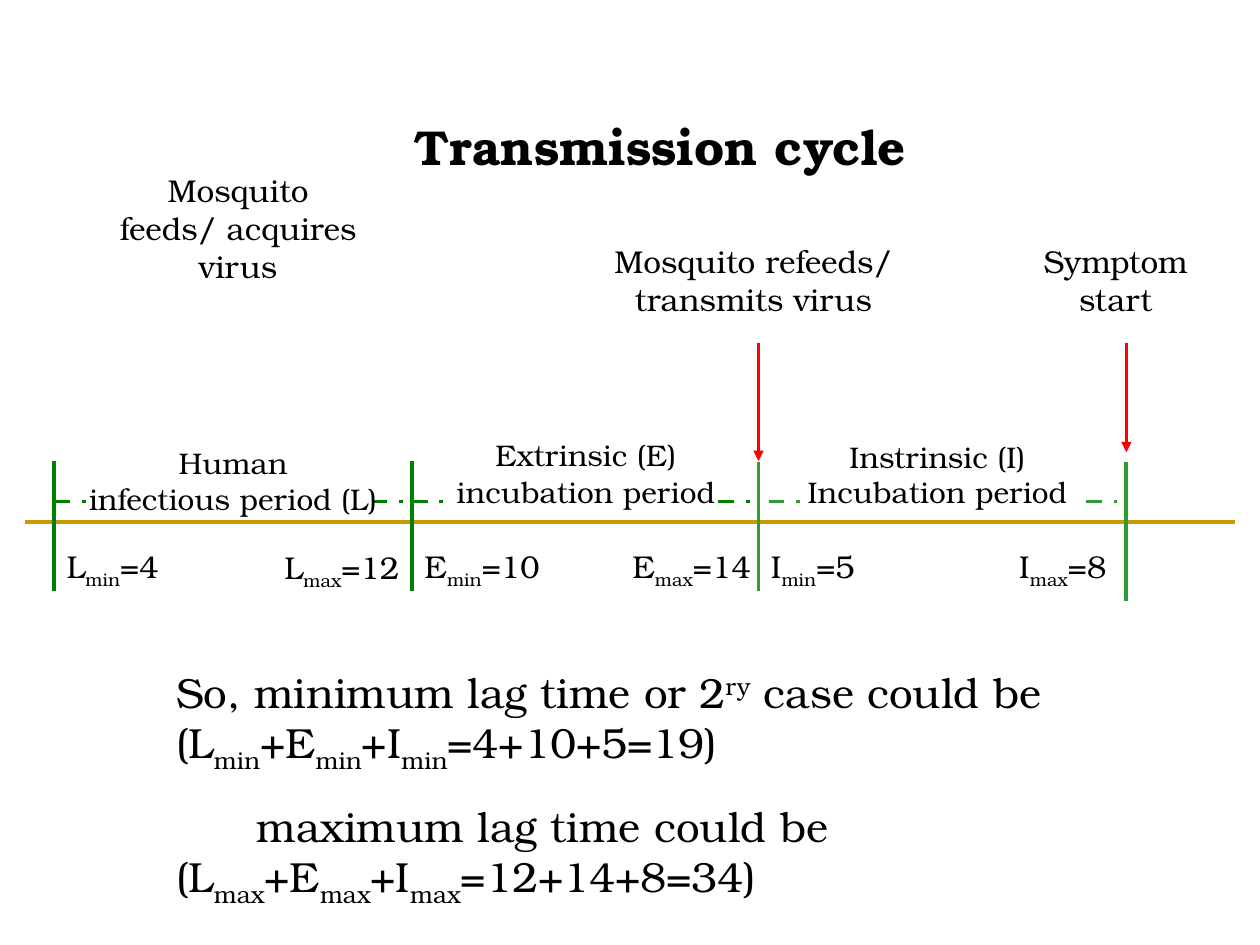
import pptx
import pptx.util
import pptx.dml.color
import pptx.enum.dml
import pptx.enum.shapes
import pptx.enum.text
import pptx.oxml.ns
from lxml import etree

Inches = pptx.util.Inches
Pt = pptx.util.Pt
ALIGN = pptx.enum.text.PP_ALIGN

FONT = "TeX Gyre Bonum"
COLORS = {"text": "000000", "axis": "CC9900", "human": "008000",
          "mosquito": "339933", "event": "FF0000"}
BASELINES = {"sub": "-25000", "super": "30000"}

TITLE = "Transmission cycle"
AXIS_Y, DASH_Y, DASH_LENGTH = 4.14, 3.98, 0.32
MARKS = [  # x, top, bottom, color
    (0.43, 3.66, 4.69, "human"),
    (3.27, 3.66, 4.69, "human"),
    (6.02, 3.67, 4.69, "mosquito"),
    (8.94, 3.67, 4.77, "mosquito"),
]
DASHES = [  # left end, color
    (0.43, "human"), (2.95, "human"), (3.27, "human"),
    (5.7, "human"), (6.1, "mosquito"), (8.62, "mosquito"),
]
EVENT_ARROWS = [(6.02, 3.66), (8.94, 3.59)]  # x, tip
EVENT_ARROW_TOP = 2.72

EVENTS = [  # text, box
    ("Mosquito feeds/ acquires virus", (0.83, 1.31, 2.12, 1)),
    ("Mosquito refeeds/ transmits virus", (4.76, 1.87, 2.44, 0.7)),
    ("Symptom start", (7.91, 1.87, 1.89, 0.7)),
]
PERIODS = [  # lines, box, line spacing, space between in points
    (["Human", "infectious period (L)"], (0.59, 3.48, 2.52, 0.67), 1, 0),
    (["Extrinsic (E)", "incubation period"], (2.64, 3.52, 4.02, 0.58), 0.6, 8.5),
    (["Instrinsic (I) Incubation period"], (6.1, 3.43, 2.68, 0.67), 1, 0),
]
LIMITS = [  # symbol, subscript, days, left, top, width
    ("L", "min", 4, 0.43, 4.29, 1.34),
    ("L", "max", 12, 2.16, 4.3, 1.5),
    ("E", "min", 10, 3.27, 4.29, 1.73),
    ("E", "max", 14, 4.92, 4.29, 1.26),
    ("I", "min", 5, 6.02, 4.29, 1.1),
    ("I", "max", 8, 7.99, 4.29, 1.18),
]
LAG_BOX = (1.3, 5.24, 9.37, 1.9)
LAG_TIMES = [  # opening runs, subscript, sum, first-line indent
    ([("So, minimum lag time or 2", None), ("ry", "super"), (" case could be", None)],
     "min", "=4+10+5=19)", 0),
    ([("maximum lag time could be", None)], "max", "=12+14+8=34)", 0.64),
]


def rgb(name):
    return pptx.dml.color.RGBColor.from_string(COLORS[name])


def add_runs(paragraph, runs, size, bold=False):
    """Add (text, position) runs, where position is None, "sub" or "super"."""
    for text, position in runs:
        run = paragraph.add_run()
        run.text = text
        run.font.name = FONT
        run.font.size = Pt(size)
        run.font.bold = bold
        run.font.color.rgb = rgb("text")
        if position:
            run._r.get_or_add_rPr().set("baseline", BASELINES[position])


def add_text_frame(slide, box):
    frame = slide.shapes.add_textbox(*map(Inches, box)).text_frame
    frame.word_wrap = True
    return frame


def add_paragraph(frame, index, space_before=0):
    if index == 0:
        return frame.paragraphs[0]
    paragraph = frame.add_paragraph()
    paragraph.space_before = Pt(space_before)
    return paragraph


def add_centered_text(slide, lines, box, size, line_spacing=1, space_before=0):
    frame = add_text_frame(slide, box)
    for index, line in enumerate(lines):
        paragraph = add_paragraph(frame, index, space_before)
        paragraph.alignment = ALIGN.CENTER
        paragraph.line_spacing = line_spacing
        add_runs(paragraph, [(line, None)], size)


def add_line(slide, start, end, color, width=2.25, dashed=False, arrow=False):
    connector = slide.shapes.add_connector(
        pptx.enum.shapes.MSO_CONNECTOR.STRAIGHT, *map(Inches, start + end))
    connector.line.color.rgb = rgb(color)
    connector.line.width = Pt(width)
    if dashed:
        connector.line.dash_style = pptx.enum.dml.MSO_LINE.DASH_DOT
    if arrow:
        etree.SubElement(connector.line._get_or_add_ln(),
                         pptx.oxml.ns.qn("a:tailEnd"), type="triangle")
    etree.SubElement(connector._element.spPr, pptx.oxml.ns.qn("a:effectLst"))


def add_title(slide):
    title = slide.shapes.title
    title.left, title.top, title.width, title.height = map(Inches, (0.74, 0.53, 9, 1.25))
    title.text_frame.vertical_anchor = pptx.enum.text.MSO_ANCHOR.MIDDLE
    paragraph = title.text_frame.paragraphs[0]
    paragraph.alignment = ALIGN.CENTER
    add_runs(paragraph, [(TITLE, None)], 28, bold=True)


def add_timeline(slide):
    add_line(slide, (0.2, AXIS_Y), (9.8, AXIS_Y), "axis")
    for left, color in DASHES:
        add_line(slide, (left, DASH_Y), (left + DASH_LENGTH, DASH_Y), color, dashed=True)
    for x, top, bottom, color in MARKS:
        add_line(slide, (x, top), (x, bottom), color)
    for x, tip in EVENT_ARROWS:
        add_line(slide, (x, EVENT_ARROW_TOP), (x, tip), "event", width=1.5, arrow=True)


def add_labels(slide):
    for text, box in EVENTS:
        add_centered_text(slide, [text], box, 18)
    for lines, box, line_spacing, space_before in PERIODS:
        add_centered_text(slide, lines, box, 17, line_spacing, space_before)
    for symbol, limit, days, left, top, width in LIMITS:
        frame = add_text_frame(slide, (left, top, width, 0.4))
        add_runs(frame.paragraphs[0],
                 [(symbol, None), (limit, "sub"), (f"={days}", None)], 18)


def add_lag_times(slide):
    frame = add_text_frame(slide, LAG_BOX)
    for index, (opening, limit, total, indent) in enumerate(LAG_TIMES):
        paragraph = add_paragraph(frame, index, space_before=15)
        paragraph._p.get_or_add_pPr().set("indent", str(Inches(indent)))
        add_runs(paragraph, opening, 24)
        paragraph.add_line_break()
        for symbol in ("(L", "+E", "+I"):
            add_runs(paragraph, [(symbol, None), (limit, "sub")], 24)
        add_runs(paragraph, [(total, None)], 24)


def main():
    presentation = pptx.Presentation()
    presentation.slide_width = Inches(10)
    presentation.slide_height = Inches(7.5)
    slide = presentation.slides.add_slide(presentation.slide_layouts[5])
    add_title(slide)
    add_timeline(slide)
    add_labels(slide)
    add_lag_times(slide)
    presentation.save("out.pptx")


if __name__ == "__main__":
    main()
